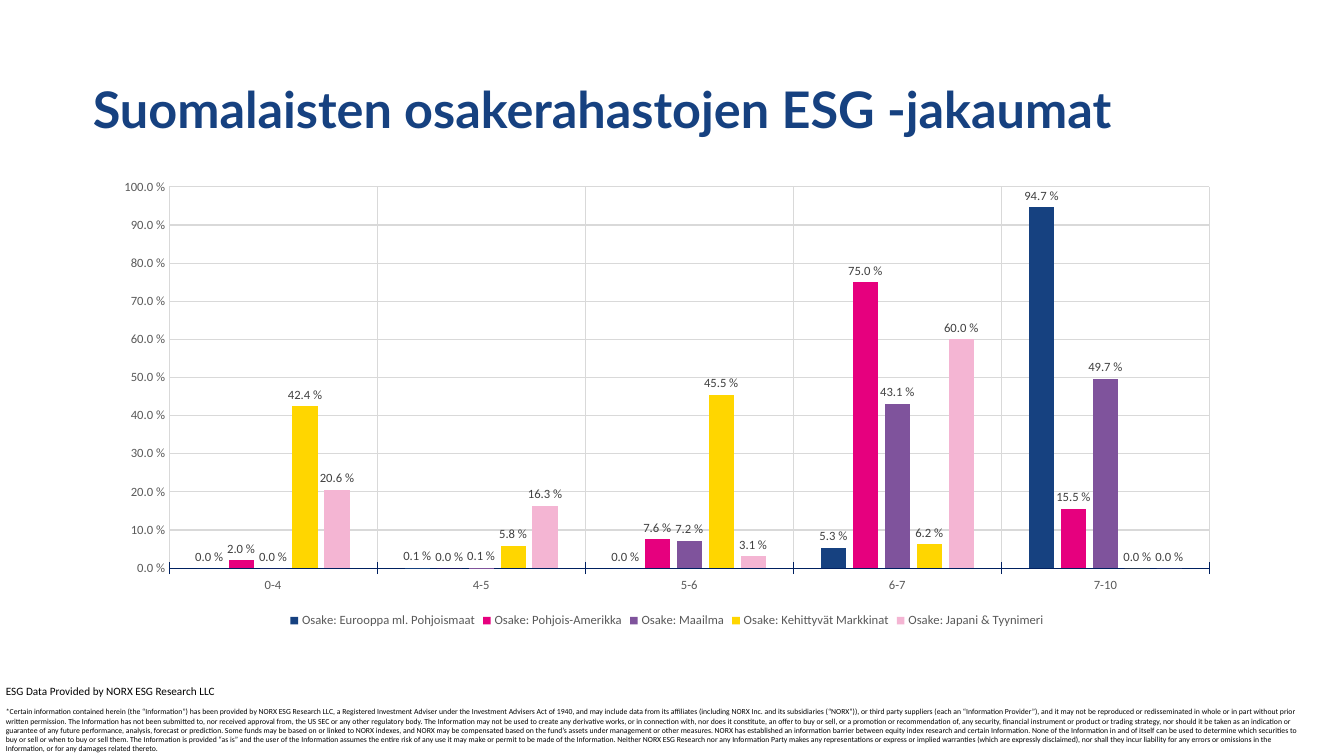
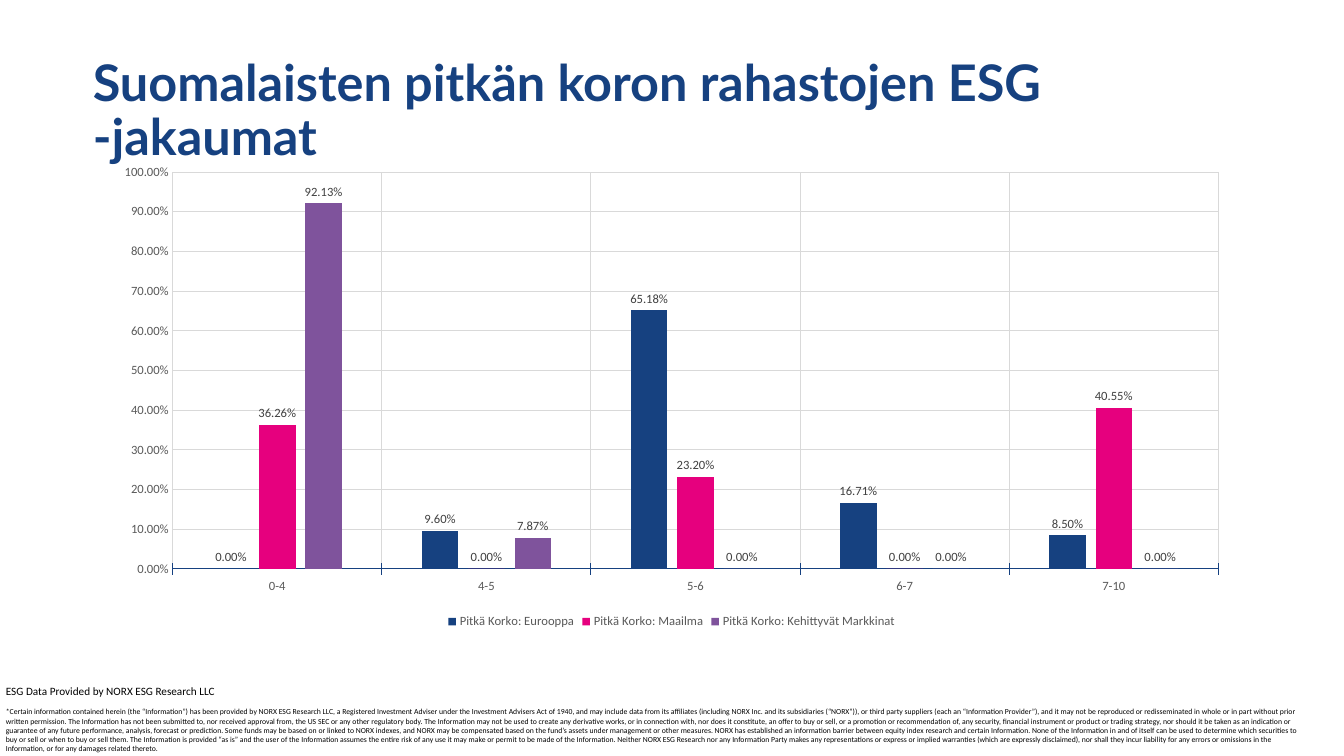
"""Build two slides with ESG distributions of Finnish equity and long-term bond funds."""
from pptx import Presentation
from pptx.chart import data as chart_data
from pptx.dml import color
from pptx.enum import chart as charts, text
from pptx.util import Inches, Pt

COLORS = {
    "navy": "164180",
    "magenta": "E6007E",
    "purple": "7F539C",
    "yellow": "FFD600",
    "pink": "F4B5D3",
    "axis": "002060",
    "grid": "D9D9D9",
    "muted": "595959",
    "label": "404040",
    "black": "000000",
}
SERIES_COLORS = ["navy", "magenta", "purple", "yellow", "pink"]
BANDS = ["0-4", "4-5", "5-6", "6-7", "7-10"]

SOURCE = "ESG Data Provided by NORX ESG Research LLC"
DISCLAIMER = [
    "*Certain information contained herein (the “Information”) has been provided by "
    "NORX ESG Research LLC, a Registered Investment Adviser under the Investment Advisers "
    "Act of 1940, and may include data from its affiliates (including NORX Inc. and its "
    "subsidiaries (“NORX”)), or third party suppliers (each an “Information Provider”), and "
    "it may not be reproduced or redisseminated in whole or in part without prior written "
    "permission.",
    "The Information has not been submitted to, nor received approval from, the US SEC or "
    "any other regulatory body.",
    "The Information may not be used to create any derivative works, or in connection with, "
    "nor does it constitute, an offer to buy or sell, or a promotion or recommendation of, "
    "any security, financial instrument or product or trading strategy, nor should it be "
    "taken as an indication or guarantee of any future performance, analysis, forecast or "
    "prediction.",
    "Some funds may be based on or linked to NORX indexes, and NORX may be compensated "
    "based on the fund’s assets under management or other measures.",
    "NORX has established an information barrier between equity index research and certain "
    "Information.",
    "None of the Information in and of itself can be used to determine which securities to "
    "buy or sell or when to buy or sell them.",
    "The Information is provided “as is” and the user of the Information assumes the entire "
    "risk of any use it may make or permit to be made of the Information.",
    "Neither NORX ESG Research nor any Information Party makes any representations or "
    "express or implied warranties (which are expressly disclaimed), nor shall they incur "
    "liability for any errors or omissions in the Information, or for any damages related "
    "thereto.",
]

EQUITY_FUNDS = {
    "Osake: Eurooppa ml. Pohjoismaat": [0, 0.001, 0, 0.053, 0.947],
    "Osake: Pohjois-Amerikka": [0.02, 0, 0.076, 0.75, 0.155],
    "Osake: Maailma": [0, 0.001, 0.072, 0.431, 0.497],
    "Osake: Kehittyvät Markkinat": [0.424, 0.058, 0.455, 0.062, 0],
    "Osake: Japani & Tyynimeri": [0.206, 0.163, 0.031, 0.6, 0],
}
BOND_FUNDS = {
    "Pitkä Korko: Eurooppa": [0, 0.096, 0.6518, 0.1671, 0.085],
    "Pitkä Korko: Maailma": [0.3626, 0, 0.232, 0, 0.4055],
    "Pitkä Korko: Kehittyvät Markkinat": [0.9213, 0.0787, 0, 0, 0],
}


def rgb(name):
    return color.RGBColor.from_string(COLORS[name])


def style_font(font, size, color_name, name="Calibri", bold=False):
    font.name = name
    font.size = Pt(size)
    font.bold = bold
    font.color.rgb = rgb(color_name)


def style_line(line, color_name):
    line.color.rgb = rgb(color_name)
    line.width = Pt(0.75)


class FundDeck:
    """Holds the shared style and the slide being built."""

    def __init__(self):
        self.deck = Presentation()
        self.deck.slide_width = Inches(13.33)
        self.deck.slide_height = Inches(7.5)
        self.page = None

    def add_page(self, title):
        self.page = self.deck.slides.add_slide(self.deck.slide_layouts[5])
        box = self.page.shapes.title
        box.left, box.top = Inches(0.82), Inches(0.39)
        box.width, box.height = Inches(11.5), Inches(1.45)
        frame = box.text_frame
        frame.auto_size = text.MSO_AUTO_SIZE.NONE
        frame.word_wrap = True
        frame.vertical_anchor = text.MSO_ANCHOR.MIDDLE
        para = frame.paragraphs[0]
        para.alignment = text.PP_ALIGN.LEFT
        para.line_spacing = 0.9
        self.add_span(para, title, 36, "navy", name="Lato", bold=True)

    def add_span(self, para, words, size, color_name, **style):
        span = para.add_run()
        span.text = words
        style_font(span.font, size, color_name, **style)

    def add_column_chart(self, left, top, width, height, funds, number_format, axis_color):
        data = chart_data.CategoryChartData(number_format=number_format)
        data.categories = BANDS
        for name, shares in funds.items():
            data.add_series(name, shares)
        chart = self.page.shapes.add_chart(
            charts.XL_CHART_TYPE.COLUMN_CLUSTERED,
            Inches(left), Inches(top), Inches(width), Inches(height), data,
        ).chart
        chart.has_title = False
        style_font(chart.font, 10, "black")
        chart.has_legend = True
        chart.legend.position = charts.XL_LEGEND_POSITION.BOTTOM
        chart.legend.include_in_layout = False
        style_font(chart.legend.font, 9, "muted")
        self.style_axes(chart, number_format, axis_color)
        self.style_columns(chart.plots[0], number_format)

    def style_axes(self, chart, number_format, axis_color):
        for axis in (chart.category_axis, chart.value_axis):
            axis.has_major_gridlines = True
            style_line(axis.major_gridlines.format.line, "grid")
            style_font(axis.tick_labels.font, 9, "muted")
            axis.minor_tick_mark = charts.XL_TICK_MARK.NONE
        chart.category_axis.major_tick_mark = charts.XL_TICK_MARK.CROSS
        style_line(chart.category_axis.format.line, axis_color)
        shares = chart.value_axis
        shares.major_tick_mark = charts.XL_TICK_MARK.NONE
        shares.format.line.fill.background()
        shares.minimum_scale, shares.maximum_scale, shares.major_unit = 0, 1, 0.1
        shares.tick_labels.number_format = number_format
        shares.tick_labels.number_format_is_linked = False

    def style_columns(self, plot, number_format):
        plot.vary_by_categories = False
        plot.gap_width = 219
        plot.overlap = -27
        for series, color_name in zip(plot.series, SERIES_COLORS):
            series.format.fill.solid()
            series.format.fill.fore_color.rgb = rgb(color_name)
            labels = series.data_labels
            labels.show_value = True
            labels.position = charts.XL_LABEL_POSITION.OUTSIDE_END
            labels.number_format = number_format
            labels.number_format_is_linked = False
            style_font(labels.font, 9, "label")

    def add_footer(self):
        box = self.page.shapes.add_textbox(
            Inches(-0.04), Inches(6.74), Inches(13.09), Inches(0.79))
        frame = box.text_frame
        frame.word_wrap = True
        frame.auto_size = text.MSO_AUTO_SIZE.SHAPE_TO_FIT_TEXT
        self.add_span(frame.paragraphs[0], SOURCE, 8, "black")
        para = frame.add_paragraph()
        para.space_before = Pt(6.7)
        self.add_span(para, " ".join(DISCLAIMER), 5.5, "black")


def main():
    fund_deck = FundDeck()
    fund_deck.add_page("Suomalaisten osakerahastojen ESG -jakaumat")
    fund_deck.add_column_chart(1.01, 1.69, 11.21, 4.58, EQUITY_FUNDS, r"0.0\ %", "axis")
    fund_deck.add_footer()
    fund_deck.add_page("Suomalaisten pitkän koron rahastojen ESG -jakaumat")
    fund_deck.add_column_chart(1.01, 1.54, 11.3, 4.74, BOND_FUNDS, "0.00%", "navy")
    fund_deck.add_footer()
    fund_deck.deck.save("out.pptx")


if __name__ == "__main__":
    main()
